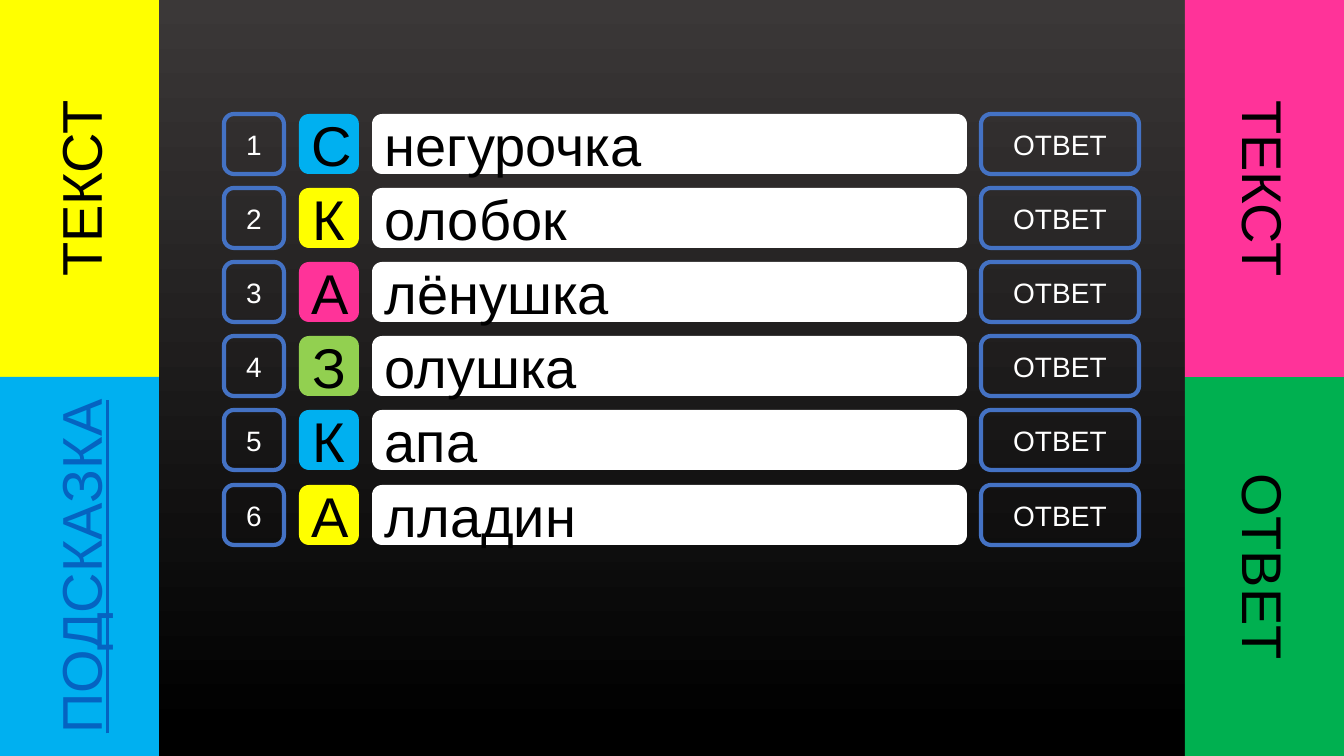
from dataclasses import dataclass

import pptx
import pptx.dml.color
import pptx.enum.shapes
import pptx.enum.text
import pptx.slide
import pptx.util

RGBColor = pptx.dml.color.RGBColor
Preset = pptx.enum.shapes.MSO_SHAPE
Align = pptx.enum.text.PP_ALIGN

PX = 914400 / 100.8
SLIDE_WIDTH, SLIDE_HEIGHT = 1344, 756

BLACK = RGBColor(0x00, 0x00, 0x00)
WHITE = RGBColor(0xFF, 0xFF, 0xFF)
CHARCOAL = RGBColor(0x3B, 0x38, 0x38)
SKY = RGBColor(0x00, 0xB0, 0xF0)
YELLOW = RGBColor(0xFF, 0xFF, 0x00)
PINK = RGBColor(0xFF, 0x33, 0x99)
LIME = RGBColor(0x92, 0xD0, 0x50)
GREEN = RGBColor(0x00, 0xB0, 0x50)
OUTLINE = RGBColor(0x44, 0x72, 0xC4)
LINK = RGBColor(0x05, 0x63, 0xC1)

FIRST_ROW_TOP, LAST_ROW_TOP = 114, 485
ROW_HEIGHT = 60
NUMBER_LEFT, LETTER_LEFT, WORD_LEFT, ANSWER_LEFT = 224, 299, 372, 981
WORD_WIDTH, ANSWER_WIDTH = 595, 158
PANEL_WIDTH, PANEL_SPLIT = 159, 377


@dataclass(frozen=True)
class Box:
    left: int
    top: int
    width: int
    height: int


@dataclass(frozen=True)
class Row:
    letter: str
    ending: str
    color: RGBColor


@dataclass(frozen=True)
class Panel:
    text: str
    box: Box
    fill: RGBColor
    direction: str
    color: RGBColor = BLACK
    underline: bool = False
    padded: bool = True


ROWS = [
    Row("С", "негурочка", SKY),
    Row("К", "олобок", YELLOW),
    Row("А", "лёнушка", PINK),
    Row("З", "олушка", LIME),
    Row("К", "апа", SKY),
    Row("А", "лладин", YELLOW),
]

RIGHT = SLIDE_WIDTH - PANEL_WIDTH
LOWER_HEIGHT = SLIDE_HEIGHT - PANEL_SPLIT
PANELS = [
    Panel("ОТВЕТ", Box(RIGHT, PANEL_SPLIT, PANEL_WIDTH, LOWER_HEIGHT), GREEN, "vert", padded=False),
    Panel("ТЕКСТ", Box(RIGHT, 0, PANEL_WIDTH, PANEL_SPLIT), PINK, "vert"),
    Panel("ТЕКСТ", Box(0, 0, PANEL_WIDTH, PANEL_SPLIT), YELLOW, "vert270"),
    Panel("ПОДСКАЗКА", Box(0, PANEL_SPLIT, PANEL_WIDTH, LOWER_HEIGHT), SKY, "vert270",
          color=LINK, underline=True),
]


def px(length: int) -> pptx.util.Emu:
    return pptx.util.Emu(round(length * PX))


def add_label(slide: pptx.slide.Slide, text: str, box: Box, *,
              preset: Preset = Preset.ROUNDED_RECTANGLE, fill: RGBColor | None = None,
              size: int = 40, color: RGBColor = BLACK, align: Align = Align.CENTER,
              underline: bool = False, padded: bool = True, direction: str = "horz") -> None:
    label = slide.shapes.add_shape(
        preset, px(box.left), px(box.top), px(box.width), px(box.height))
    label.shadow.inherit = False
    if fill is None:
        label.fill.background()
        label.line.color.rgb = OUTLINE
        label.line.width = pptx.util.Pt(3)
    else:
        label.fill.solid()
        label.fill.fore_color.rgb = fill
        label.line.fill.background()

    frame = label.text_frame
    frame.word_wrap = True
    frame.vertical_anchor = pptx.enum.text.MSO_ANCHOR.MIDDLE
    if not padded:
        frame.margin_left = frame.margin_top = frame.margin_right = frame.margin_bottom = 0
    label.element.txBody.bodyPr.set("vert", direction)

    paragraph = frame.paragraphs[0]
    paragraph.alignment = align
    run = paragraph.add_run()
    run.text = text
    run.font.name = "Arial"
    run.font.size = pptx.util.Pt(size)
    run.font.color.rgb = color
    if underline:
        run.font.underline = True


def add_button(slide: pptx.slide.Slide, text: str, box: Box) -> None:
    add_label(slide, text, box, size=20, color=WHITE, padded=False)


def row_box(index: int, left: int, width: int = ROW_HEIGHT) -> Box:
    top = FIRST_ROW_TOP + (LAST_ROW_TOP - FIRST_ROW_TOP) * index // (len(ROWS) - 1)
    return Box(left, top, width, ROW_HEIGHT)


def paint_background(slide: pptx.slide.Slide) -> None:
    fill = slide.background.fill
    fill.gradient()
    fill.gradient_angle = 270
    for stop, color, position in zip(fill.gradient_stops, (CHARCOAL, BLACK), (0, 0.97)):
        stop.color.rgb = color
        stop.position = position


def main() -> None:
    presentation = pptx.Presentation()
    presentation.slide_width = px(SLIDE_WIDTH)
    presentation.slide_height = px(SLIDE_HEIGHT)
    slide = presentation.slides.add_slide(presentation.slide_layouts[6])
    paint_background(slide)

    for index, row in enumerate(ROWS):
        add_button(slide, str(index + 1), row_box(index, NUMBER_LEFT))
        add_label(slide, row.letter, row_box(index, LETTER_LEFT), fill=row.color)
        add_label(slide, row.ending, row_box(index, WORD_LEFT, WORD_WIDTH),
                  fill=WHITE, align=Align.LEFT)
        add_button(slide, "ОТВЕТ", row_box(index, ANSWER_LEFT, ANSWER_WIDTH))

    for panel in PANELS:
        add_label(slide, panel.text, panel.box, preset=Preset.RECTANGLE, fill=panel.fill,
                  color=panel.color, underline=panel.underline, padded=panel.padded,
                  direction=panel.direction)

    presentation.save("out.pptx")


if __name__ == "__main__":
    main()
